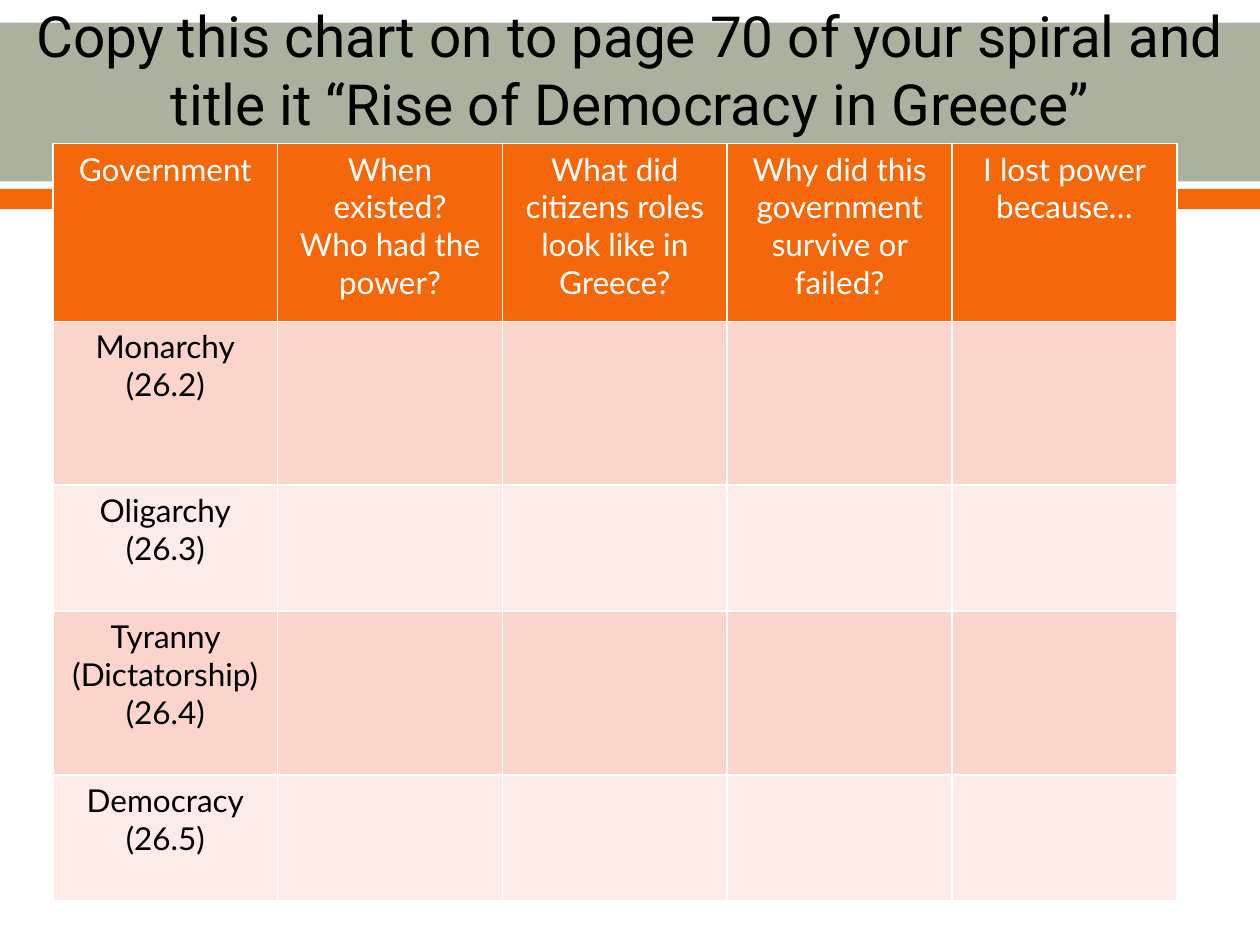
"""Build the note-taking chart slide on the rise of democracy in Greece."""
from lxml import etree
from pptx import Presentation
from pptx import util as u
from pptx.dml.color import RGBColor
from pptx.enum import shapes, text
from pptx.oxml.ns import qn

TITLE = "Copy this chart on to page 70 of your spiral and title it “Rise of Democracy in Greece”"
HEADERS = [
    "Government",
    "When existed?\nWho had the power?",
    "What did citizens roles look like in Greece?",
    "Why did this government survive or failed?",
    "I lost power because…",
]
GOVERNMENTS = [
    "Monarchy\n(26.2)",
    "Oligarchy\n(26.3)",
    "Tyranny (Dictatorship)\n(26.4)",
    "Democracy\n(26.5)",
]
COLORS = {"sage": "ABB19F", "orange": "F4680B", "odd": "FBD4CC",
          "even": "FDEBE7", "white": "FFFFFF", "black": "000000"}
WIDTH, HEIGHT = 10, 7.5
BANDS = [("sage", 0.18, 1.26), ("orange", 1.5, 0.16)]
TITLE_BOX = (0, 0.17, WIDTH, 0.75)
TABLE_LEFT, TABLE_TOP, TABLE_WIDTH = 0.42, 1.14, 8.92
ROW_HEIGHTS = [1.41, 1.3, 1, 1.3, 1]


def rgb(name):
    return RGBColor.from_string(COLORS[name])


def paint(item, name):
    item.fill.solid()
    item.fill.fore_color.rgb = rgb(name)


def write(frame, words, font, size, color):
    frame.text = words
    for para in frame.paragraphs:
        para.alignment = text.PP_ALIGN.CENTER
        for span in para.runs:
            span.font.name = font
            span.font.size = u.Pt(size)
            span.font.color.rgb = rgb(color)


def add_borders(cell, color, points):
    properties = cell._tc.get_or_add_tcPr()
    for place, side in enumerate("LRTB"):
        line = etree.Element(qn(f"a:ln{side}"), w=str(u.Pt(points)))
        fill = etree.SubElement(line, qn("a:solidFill"))
        etree.SubElement(fill, qn("a:srgbClr"), val=COLORS[color])
        properties.insert(place, line)


def add_bands(page):
    for color, top, height in BANDS:
        band = page.shapes.add_shape(shapes.MSO_SHAPE.RECTANGLE, 0, u.Inches(top),
                                     u.Inches(WIDTH), u.Inches(height))
        band.shadow.inherit = False
        paint(band, color)
        band.line.fill.background()


def add_title(page):
    box = page.shapes.add_textbox(*map(u.Inches, TITLE_BOX))
    box.text_frame.word_wrap = True
    box.text_frame.vertical_anchor = text.MSO_ANCHOR.MIDDLE
    write(box.text_frame, TITLE, "Roboto", 32.4, "black")


def add_chart_table(page):
    rows = [HEADERS] + [[name] + [""] * (len(HEADERS) - 1) for name in GOVERNMENTS]
    lengths = (TABLE_LEFT, TABLE_TOP, TABLE_WIDTH, sum(ROW_HEIGHTS))
    table = page.shapes.add_table(len(rows), len(HEADERS), *map(u.Inches, lengths)).table
    for column in table.columns:
        column.width = u.Inches(TABLE_WIDTH / len(HEADERS))
    for index, (words, height) in enumerate(zip(rows, ROW_HEIGHTS)):
        table.rows[index].height = u.Inches(height)
        fill = "orange" if index == 0 else "odd" if index % 2 else "even"
        for cell, entry in zip(table.rows[index].cells, words):
            paint(cell, fill)
            add_borders(cell, "white", 1)
            write(cell.text_frame, entry, "Lato", 18, "black" if index else "white")


def main():
    deck = Presentation()
    deck.slide_width, deck.slide_height = u.Inches(WIDTH), u.Inches(HEIGHT)
    page = deck.slides.add_slide(deck.slide_layouts[6])
    add_bands(page)
    add_title(page)
    add_chart_table(page)
    deck.save("out.pptx")


if __name__ == "__main__":
    main()
